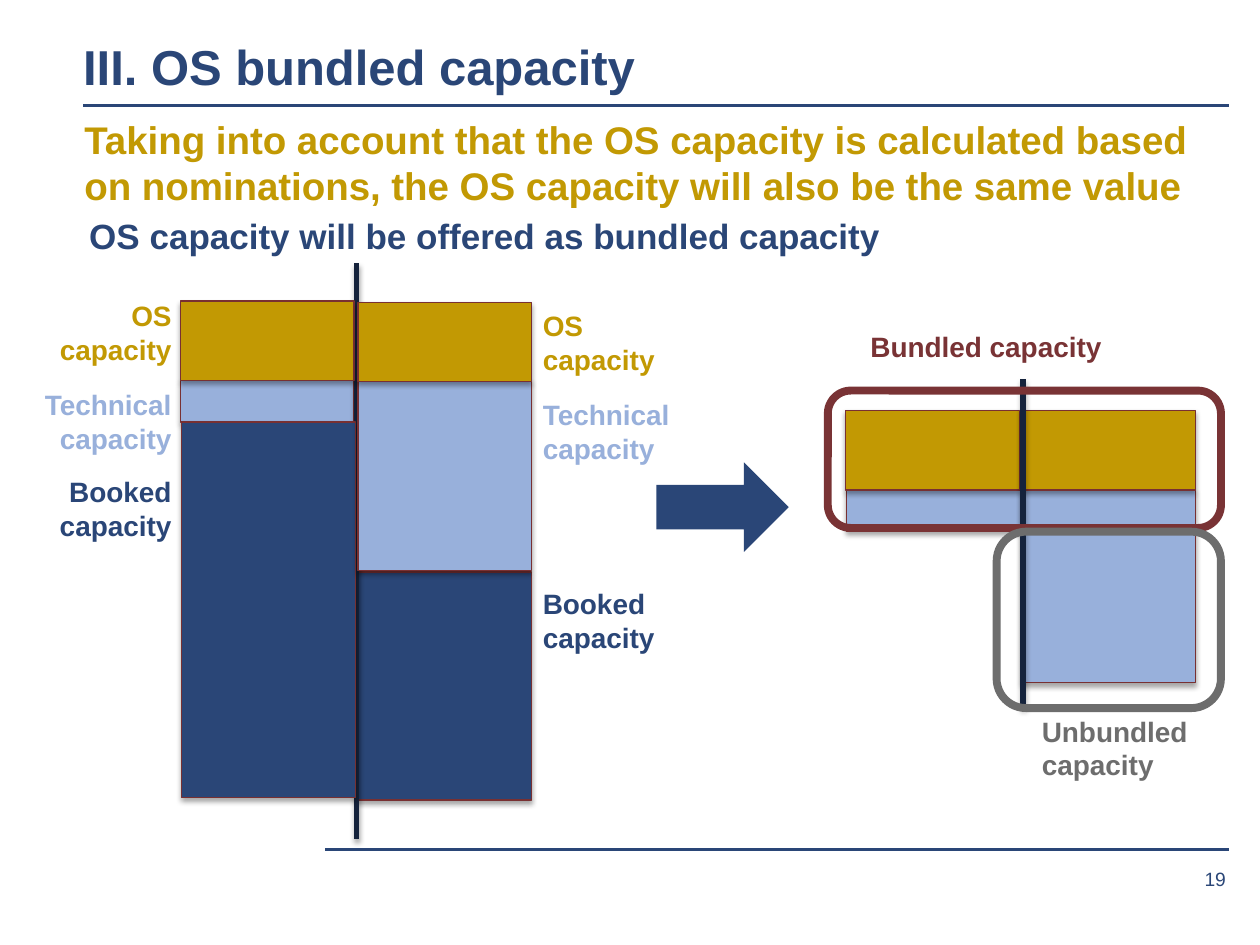
from lxml.etree import SubElement
from pptx import Presentation
from pptx.dml.color import RGBColor
from pptx.enum.shapes import MSO_CONNECTOR as CONNECTOR, MSO_SHAPE as SHAPE
from pptx.enum.text import MSO_ANCHOR as ANCHOR, PP_ALIGN as ALIGN
from pptx.oxml.ns import qn
from pptx.util import Inches, Pt

COLORS = {
    "navy": "2A4677", "axis": "15233C", "gold": "C29903", "light": "98B0DB",
    "edge": "783032", "bundled": "793335", "grey": "6D6D6D", "shadow": "000000",
}
BAR_WIDTH = 1.38
OS_HEIGHT = 0.63


def rgb(name):
    """Return the named colour."""
    return RGBColor.from_string(COLORS[name])


def set_shadow(part, visible=True):
    """Give a shape or connector a soft shadow below, or none."""
    effects = SubElement(part._element.spPr, qn("a:effectLst"))
    if visible:
        shadow = SubElement(effects, qn("a:outerShdw"), blurRad=str(Pt(3.1)),
                            dist=str(Pt(1.8)), dir="5400000", rotWithShape="0")
        color = SubElement(shadow, qn("a:srgbClr"), val=COLORS["shadow"])
        SubElement(color, qn("a:alpha"), val="35000")


def write(shape, text, size, color, bold=True, align=ALIGN.LEFT, inset=0.0,
          anchor=ANCHOR.TOP, wrap=True):
    """Set the text of a shape and format it."""
    frame = shape.text_frame
    frame.text = text
    frame.word_wrap = wrap
    frame.vertical_anchor = anchor
    frame.margin_left = frame.margin_right = Inches(inset)
    frame.margin_top = frame.margin_bottom = Inches(inset / 2)
    paragraph = frame.paragraphs[0]
    paragraph.alignment = align
    font = paragraph.runs[0].font
    font.name, font.size, font.bold = "Arial", Pt(size), bold
    font.color.rgb = rgb(color)


def add_text(slide, box, text, size, color, **style):
    """Add a text box in the given box."""
    write(slide.shapes.add_textbox(*map(Inches, box)), text, size, color, **style)


def add_label(slide, box, text, color, size=16, align=ALIGN.LEFT):
    """Add a bold label with the usual text insets."""
    add_text(slide, box, text, size, color, align=align, inset=0.1)


def add_line(slide, start, end, color, width, shadow=False):
    """Add a straight line."""
    line = slide.shapes.add_connector(CONNECTOR.STRAIGHT, *map(Inches, start + end))
    line.line.color.rgb = rgb(color)
    line.line.width = Pt(width)
    set_shadow(line, shadow)


def add_bar(slide, left, top, height, color):
    """Add one capacity block."""
    bar = slide.shapes.add_shape(
        SHAPE.RECTANGLE, *map(Inches, (left, top, BAR_WIDTH, height)))
    bar.fill.solid()
    bar.fill.fore_color.rgb = rgb(color)
    bar.line.color.rgb = rgb("edge")
    bar.line.width = Pt(0.75)
    set_shadow(bar)


def add_axis(slide, x, top, bottom):
    """Add the vertical border between the two sides."""
    add_line(slide, (x, bottom), (x, top), "axis", 3, shadow=True)


def add_frame(slide, box, color):
    """Add an unfilled rounded frame."""
    frame = slide.shapes.add_shape(SHAPE.ROUNDED_RECTANGLE, *map(Inches, box))
    frame.shadow.inherit = False
    frame.fill.background()
    frame.line.color.rgb = rgb(color)
    frame.line.width = Pt(4.5)


def add_header(slide, left, top, width):
    """Place the title, its rule and the two statements."""
    title = slide.shapes.title
    title.left, title.top, title.width, title.height = map(
        Inches, (left, top, width, 0.4))
    write(title, "III. OS bundled capacity", 28, "navy", anchor=ANCHOR.BOTTOM)
    add_line(slide, (left, top + 0.48), (9.75, top + 0.48), "navy", 1.5)
    add_text(slide, (left + 0.01, top + 0.56, 9.06, 0.39),
             "Taking into account that the OS capacity is calculated based on "
             "nominations, the OS capacity will also be the same value", 22, "gold")
    add_label(slide, (left - 0.05, top + 1.29, width, 0.44),
              "OS capacity will be offered as bundled capacity", "navy", size=20)


def add_footer(slide, left, top, right):
    """Place the bottom rule and the page number."""
    add_line(slide, (left, top), (right, top), "navy", 1.5)
    add_text(slide, (right - 0.81, top + 0.08, 0.79, 0.31), "19", 11, "navy",
             bold=False, align=ALIGN.RIGHT, anchor=ANCHOR.MIDDLE, wrap=False)


def add_capacity_stacks(slide, left, top):
    """Place the two capacity stacks, their border and their labels."""
    right = left + 1.41
    add_bar(slide, left, top + 0.63, 0.33, "light")
    add_bar(slide, right, top + 2.15, 1.81, "navy")
    add_axis(slide, left + 1.4, top - 0.3, top + 4.27)
    add_bar(slide, left + 0.01, top + 0.96, 2.98, "navy")
    add_bar(slide, right, top + 0.63, 1.51, "light")
    add_bar(slide, left, top, OS_HEIGHT, "gold")
    add_bar(slide, right, top + 0.01, OS_HEIGHT, "gold")

    labels = (("OS capacity", "gold", 1.15, -0.07, 0.01),
              ("Technical capacity", "light", 1.34, 0.64, 0.72),
              ("Booked capacity", "navy", 1.1, 1.33, 2.22))
    for text, color, width, left_drop, right_drop in labels:
        add_label(slide, (left + 0.03 - width, top + left_drop, width, 0.64),
                  text, color, align=ALIGN.RIGHT)
        add_label(slide, (right + 1.37, top + right_drop, width, 0.64), text, color)


def add_arrow(slide, box):
    """Place the block arrow between the two diagrams."""
    arrow = slide.shapes.add_shape(SHAPE.RIGHT_ARROW, *map(Inches, box))
    arrow.shadow.inherit = False
    arrow.fill.solid()
    arrow.fill.fore_color.rgb = rgb("navy")
    arrow.line.fill.background()


def add_bundle_result(slide, left, top):
    """Place the bundled and unbundled capacity with frames and labels."""
    right = left + 1.4
    add_bar(slide, left + 0.01, top + OS_HEIGHT, 0.33, "light")
    add_bar(slide, right, top + OS_HEIGHT, 1.53, "light")
    for side in (left, right):
        add_bar(slide, side, top, OS_HEIGHT, "gold")
    add_axis(slide, right + 0.01, top - 0.25, top + 2.36)
    add_frame(slide, (left - 0.14, top - 0.16, 3.12, 1.09), "bundled")
    add_label(slide, (left + 0.1, top - 0.69, 2.2, 0.37), "Bundled capacity", "bundled")
    add_frame(slide, (left + 1.2, top + 0.96, 1.78, 1.4), "grey")
    add_label(slide, (left + 1.46, top + 2.36, 1.48, 0.64), "Unbundled capacity", "grey")


def main():
    """Build and save the slide."""
    deck = Presentation()
    deck.slide_width, deck.slide_height = Inches(10), Inches(7.5)
    slide = deck.slides.add_slide(deck.slide_layouts[5])
    add_header(slide, 0.66, 0.36, 9.11)
    add_footer(slide, 2.58, 6.74, 9.75)
    add_capacity_stacks(slide, 1.43, 2.39)
    add_bundle_result(slide, 6.71, 3.26)
    add_arrow(slide, (5.21, 3.67, 1.05, 0.71))
    deck.save("out.pptx")


if __name__ == "__main__":
    main()
